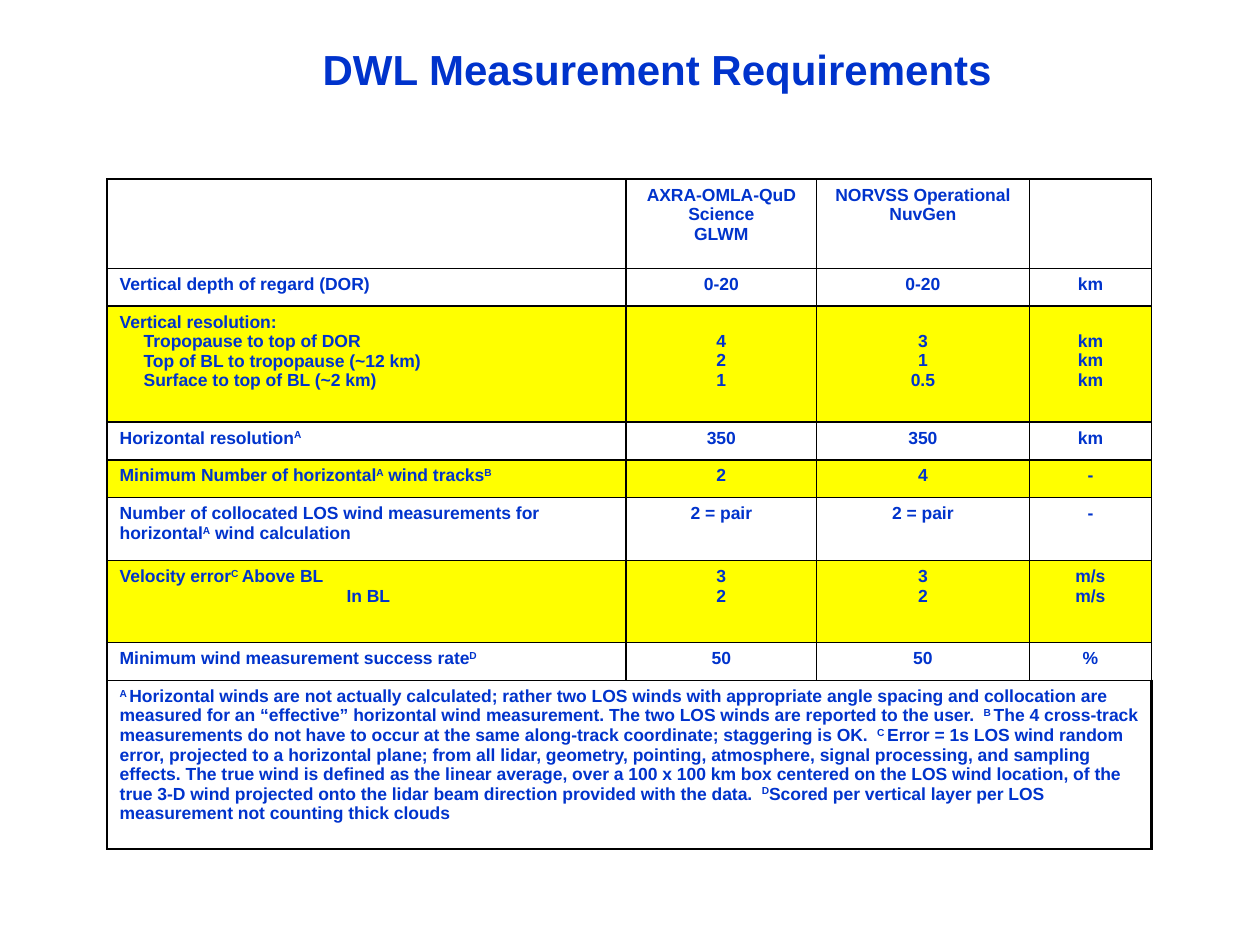
from lxml import etree
from pptx import Presentation, util as u
from pptx.dml.color import RGBColor
from pptx.enum import text as t
from pptx.oxml.ns import qn

BLUE, YELLOW, BLACK = "0033CC", "FFFF00", "000000"
LEFT, CENTER = t.PP_ALIGN.LEFT, t.PP_ALIGN.CENTER


def write(frame, content, size=10, align=LEFT, indents=(), tab=None):
    """Fill a frame line by line; parts between ^ signs are superscript.

    A line with a tab hangs: its first row starts at the frame's edge.
    """
    frame.word_wrap = True
    for i, line in enumerate(content.split("\n")):
        paragraph = frame.paragraphs[0] if i == 0 else frame.add_paragraph()
        paragraph.alignment = align
        props = paragraph._p.get_or_add_pPr()
        has_tab = "\t" in line
        if i < len(indents):
            margin = u.Inches(indents[i])
            props.set("marL", str(margin))
            props.set("indent", str(-margin if has_tab else 0))
        if has_tab:
            stops = etree.SubElement(props, qn("a:tabLst"))
            etree.SubElement(stops, qn("a:tab"), pos=str(u.Inches(tab)), algn="l")
        for j, part in enumerate(line.split("^")):
            if not part:
                continue
            run = paragraph.add_run()
            run.text = part
            run.font.name = "Arial"
            run.font.size = u.Pt(size)
            run.font.bold = True
            run.font.color.rgb = RGBColor.from_string(BLUE)
            if j % 2:
                run.font._element.set("baseline", "30000")


def style_cell(cell, fill=None, right_width=1):
    """Set the fill, then the four borders, which must precede it in the XML."""
    if fill:
        cell.fill.solid()
        cell.fill.fore_color.rgb = RGBColor.from_string(fill)
    else:
        cell.fill.background()
    props = cell._tc.get_or_add_tcPr()
    for i, side in enumerate("LRTB"):
        width = right_width if side == "R" else 1
        border = etree.Element(qn(f"a:ln{side}"), w=str(u.Pt(width)))
        solid = etree.SubElement(border, qn("a:solidFill"))
        etree.SubElement(solid, qn("a:srgbClr"), val=BLACK)
        props.insert(i, border)


prs = Presentation()
prs.slide_width, prs.slide_height = u.Inches(10), u.Inches(7.5)
slide = prs.slides.add_slide(prs.slide_layouts[6])

title = slide.shapes.add_textbox(u.Inches(1.42), u.Inches(0.25), u.Inches(7.59), u.Inches(0.59))
title.text_frame.vertical_anchor = t.MSO_ANCHOR.MIDDLE
write(title.text_frame, "DWL Measurement Requirements", size=24, align=CENTER)

# Requirement, science mission, operational mission, unit
requirements = [
    ("", "AXRA-OMLA-QuD Science\nGLWM", "NORVSS Operational\nNuvGen", ""),
    ("Vertical depth of regard (DOR)", "0-20", "0-20", "km"),
    ("Vertical resolution:\nTropopause to top of DOR\nTop of BL to tropopause (~12 km)\n"
     "Surface to top of BL (~2 km)", "4\n2\n1", "3\n1\n0.5", "km\nkm\nkm"),
    ("Horizontal resolution^A^", "350", "350", "km"),
    ("Minimum Number of horizontal^A^ wind tracks^B^", "2", "4", "-"),
    ("Number of collocated LOS wind measurements for horizontal^A^ wind calculation",
     "2 = pair", "2 = pair", "-"),
    ("Velocity error^C^\tAbove BL\nIn BL", "3\n2", "3\n2", "m/s\nm/s"),
    ("Minimum wind measurement success rate^D^", "50", "50", "%"),
]
footnotes = (
    "^A ^Horizontal winds are not actually calculated; rather two LOS winds with appropriate "
    "angle spacing and collocation are measured for an “effective” horizontal wind measurement. "
    "The two LOS winds are reported to the user.  ^B ^The 4 cross-track measurements do not have "
    "to occur at the same along-track coordinate; staggering is OK.  ^C ^Error = 1s LOS wind "
    "random error, projected to a horizontal plane; from all lidar, geometry, pointing, "
    "atmosphere, signal processing, and sampling effects. The true wind is defined as the linear "
    "average, over a 100 x 100 km box centered on the LOS wind location, of the true 3-D wind "
    "projected onto the lidar beam direction provided with the data.  ^D^Scored per vertical "
    "layer per LOS measurement not counting thick clouds"
)
column_widths = [4.12, 1.51, 1.69, 0.97]
row_heights = [0.71, 0.3, 0.92, 0.3, 0.3, 0.5, 0.65, 0.3, 1.34]
RESOLUTION, VELOCITY = 2, 6
highlighted = {RESOLUTION, 4, VELOCITY}
line_indents = {RESOLUTION: (0, 0.19, 0.19, 0.19), VELOCITY: (0.47, 1.8)}

table = slide.shapes.add_table(
    len(row_heights), len(column_widths), u.Inches(0.85), u.Inches(1.42),
    u.Inches(sum(column_widths)), u.Inches(sum(row_heights))).table
table.first_row = table.horz_banding = False
for column, width in zip(table.columns, column_widths):
    column.width = u.Inches(width)
for row, height in zip(table.rows, row_heights):
    row.height = u.Inches(height)

for r, entries in enumerate(requirements):
    for c, entry in enumerate(entries):
        cell = table.cell(r, c)
        style_cell(cell, YELLOW if r in highlighted else None)
        if c == 0:
            write(cell.text_frame, entry, indents=line_indents.get(r, ()), tab=1.47)
        else:
            write(cell.text_frame, entry, align=CENTER)
            if r == RESOLUTION:  # values start level with the second label line
                cell.margin_top = u.Inches(0.2)

last = len(requirements)
for c in range(len(column_widths)):
    style_cell(table.cell(last, c), right_width=2.25)
footer = table.cell(last, 0)
footer.merge(table.cell(last, len(column_widths) - 1))
write(footer.text_frame, footnotes)

prs.save("out.pptx")
